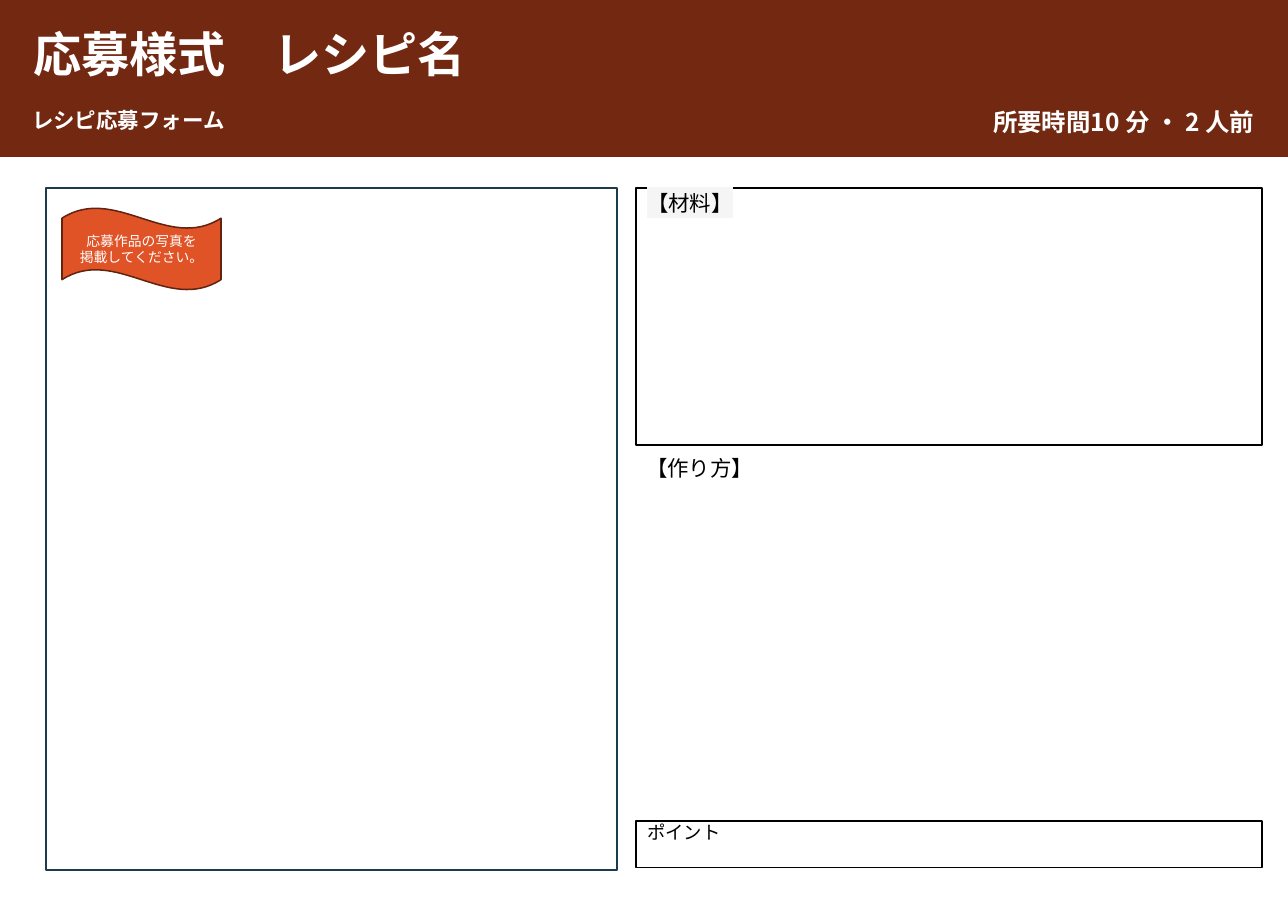
"""Build the recipe entry form slide."""
from lxml.etree import SubElement
from pptx import Presentation
from pptx.dml.color import RGBColor
from pptx.enum.shapes import MSO_SHAPE
from pptx.enum.text import MSO_ANCHOR, MSO_AUTO_SIZE, PP_ALIGN
from pptx.oxml import parse_xml
from pptx.oxml.ns import nsdecls, qn
from pptx.util import Pt

SCALE = 8298
NOTO = "Noto Sans CJK JP"
WHITE, BLACK = "FFFFFF", "000000"


def px(num):
    """Turn pixels into EMU."""
    return num * SCALE


def tint(code):
    """Turn a hex string into a colour."""
    return RGBColor.from_string(code)


def place(shape, left, top, width, height):
    """Move and size a shape."""
    shape.left, shape.top = px(left), px(top)
    shape.width, shape.height = px(width), px(height)


def edge(shape, line, weight):
    """Set the outline of a shape."""
    shape.line.color.rgb = tint(line)
    shape.line.width = Pt(weight)


def block(slide, kind, box, fill, line=None, weight=1):
    """Add a preset shape with plain fill and outline."""
    shape = slide.shapes.add_shape(kind, *map(px, box))
    shape.shadow.inherit = False
    shape.fill.solid()
    shape.fill.fore_color.rgb = tint(fill)
    if line:
        edge(shape, line, weight)
    else:
        shape.line.fill.background()
    return shape


def write(shape, text, size=14, color=BLACK, bold=False, font=NOTO,
          align=PP_ALIGN.LEFT, anchor=MSO_ANCHOR.TOP, inset=3, space=0.9,
          hang=0, mark=None):
    """Fill a shape with formatted text, one paragraph a line."""
    frame = shape.text_frame
    frame.word_wrap = True
    frame.auto_size = MSO_AUTO_SIZE.NONE
    frame.vertical_anchor = anchor
    frame.margin_left = frame.margin_right = px(11)
    frame.margin_top = frame.margin_bottom = px(inset)
    frame.text = text
    for para in frame.paragraphs:
        props = para._p.get_or_add_pPr()
        props.set("marL", str(px(hang)))
        props.set("indent", str(-px(hang)))
        SubElement(props, qn("a:buNone"))
        para.alignment = align
        para.line_spacing = space
        para.space_before = Pt(0)
        run = para.runs[0]
        run.font.size = Pt(size)
        run.font.bold = bold
        run.font.color.rgb = tint(color)
        run.font.name = font
        attrs = run._r.get_or_add_rPr()
        east = parse_xml(f'<a:ea {nsdecls("a")} typeface="{font}"/>')
        attrs.find(qn("a:latin")).addnext(east)
        if mark:
            glow = parse_xml(f'<a:highlight {nsdecls("a")}>'
                             f'<a:srgbClr val="{mark}"/></a:highlight>')
            attrs.find(qn("a:solidFill")).addnext(glow)


def split(shape, count, gap):
    """Set the text of a shape in columns."""
    body = shape.text_frame._txBody.bodyPr
    body.set("numCol", str(count))
    body.set("spcCol", str(px(gap)))


def header(slide, title, form, time):
    """Lay out the top band and its three texts."""
    band = block(slide, MSO_SHAPE.RECTANGLE, (-1, 0, 1290, 157), "722811")
    title.element.addprevious(band.element)
    place(title, 22, 15, 1240, 84)
    write(title, "応募様式　レシピ名", size=31.5, color=WHITE, bold=True,
          anchor=MSO_ANCHOR.MIDDLE)
    place(form, 21, 107, 930, 50)
    write(form, "レシピ応募フォーム", color=WHITE, bold=True)
    place(time, 954, 107, 311, 40)
    write(time, "所要時間10 分 • 2 人前", size=16, color=WHITE, bold=True,
          align=PP_ALIGN.RIGHT)


def recipe(slide, foods, steps):
    """Lay out the right column."""
    place(foods, 636, 188, 626, 257)
    edge(foods, BLACK, 0.75)
    split(foods, 2, 22)
    write(foods, "【材料】", inset=2, space=1.0, hang=24, mark="F5F5F5")
    place(steps, 635, 455, 626, 35)
    write(steps, "【作り方】")
    point = slide.shapes.add_textbox(*map(px, (636, 821, 626, 47)))
    edge(point, BLACK, 0.75)
    write(point, "ポイント", size=12)


def photo(slide):
    """Lay out the photo frame and its ribbon."""
    block(slide, MSO_SHAPE.RECTANGLE, (46, 188, 571, 682), WHITE, "1C3C4E")
    wave = block(slide, MSO_SHAPE.WAVE, (62, 208, 159, 82), "DF5327", "622411")
    write(wave, "応募作品の写真を\n掲載してください。", size=9, color=WHITE,
          font="Karla", align=PP_ALIGN.CENTER, anchor=MSO_ANCHOR.MIDDLE,
          space=1.0)


def main():
    """Build and save the slide."""
    deck = Presentation()
    deck.slide_width, deck.slide_height = px(1288), px(911)
    slide = deck.slides.add_slide(deck.slide_layouts[4])
    holds = {hold.placeholder_format.idx: hold for hold in slide.placeholders}
    header(slide, holds[0], holds[1], holds[3])
    recipe(slide, holds[2], holds[4])
    photo(slide)
    deck.save("out.pptx")


if __name__ == "__main__":
    main()
